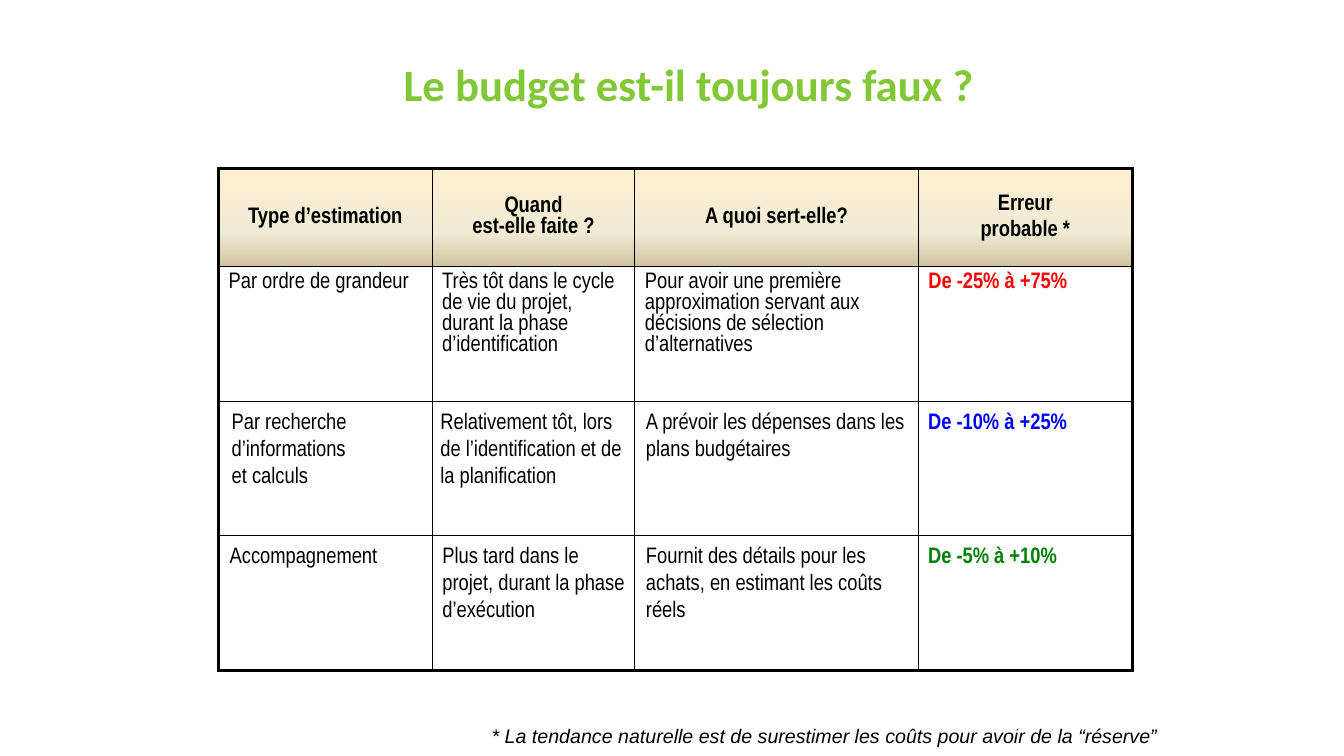
import pptx
import pptx.util
import pptx.oxml
import pptx.oxml.ns
import pptx.dml.color
import pptx.enum.text

Cm, Pt = pptx.util.Cm, pptx.util.Pt
ALIGN = pptx.enum.text.PP_ALIGN
ANCHOR = pptx.enum.text.MSO_ANCHOR
AUTO = pptx.enum.text.MSO_AUTO_SIZE
NS = pptx.oxml.ns.nsdecls("a")

HUES = {"title": "82C836", "ink": "000000", "paper": "FFFFFF",
        "red": "FF0000", "blue": "0000FF", "green": "008000",
        "cream": "FFEFD1", "sand": "F0EBD5", "tan": "D1C39F"}


def write(frame, *lines, font="Arial Narrow", size=16, hue="ink", bold=False,
          slant=False, align=ALIGN.LEFT, wrap=True):
    frame.word_wrap = wrap
    for i, line in enumerate(lines):
        para = frame.paragraphs[0] if i == 0 else frame.add_paragraph()
        para.text = line
        para.alignment = align
        if i:
            para.space_before = Pt(size * 0.2)
        for run in para.runs:
            run.font.name, run.font.size = font, Pt(size)
            run.font.bold, run.font.italic = bold, slant
            run.font.color.rgb = pptx.dml.color.RGBColor.from_string(HUES[hue])


def border(cell, side, width):
    cell._tc.get_or_add_tcPr().append(pptx.oxml.parse_xml(
        f'<a:ln{side} {NS} w="{Pt(width)}"><a:solidFill>'
        f'<a:srgbClr val="{HUES["ink"]}"/></a:solidFill></a:ln{side}>'))


deck = pptx.Presentation()
deck.slide_width, deck.slide_height = Cm(33.87), Cm(19.05)
slide = deck.slides.add_slide(deck.slide_layouts[6])
shapes = slide.shapes

# Title
title = shapes.add_textbox(Cm(0.85), Cm(0.73), Cm(33.02), Cm(2.74)).text_frame
title.vertical_anchor = ANCHOR.MIDDLE
write(title, "Le budget est-il toujours faux ?", font="Calibri", size=32,
      hue="title", bold=True, align=ALIGN.CENTER)

# Footnote
note = shapes.add_textbox(Cm(12.14), Cm(18.11), Cm(17.5), Cm(0.86)).text_frame
write(note, "* La tendance naturelle est de surestimer les coûts pour avoir de la “réserve”",
      font="Arial", size=14, slant=True, wrap=False)

# Table grid
wide = [5.38, 5.11, 7.14, 5.4]
high = [2.48, 3.39, 3.39, 3.39]
table = shapes.add_table(4, 4, Cm(5.51), Cm(4.24), Cm(sum(wide)), Cm(sum(high))).table
table.first_row = table.horz_banding = False
for col, size in zip(table.columns, wide):
    col.width = Cm(size)
for row, size in zip(table.rows, high):
    row.height = Cm(size)

# Borders and fills: thick outside, thin inside
stops = "".join(f'<a:gs pos="{pos}000"><a:srgbClr val="{HUES[hue]}"/></a:gs>'
                for pos, hue in [(0, "cream"), (65, "sand"), (100, "tan")])
for r in range(4):
    for c in range(4):
        cell = table.cell(r, c)
        for side, edge in [("L", c == 0), ("R", c == 3), ("T", r == 0), ("B", r == 3)]:
            border(cell, side, 2.25 if edge else 1)
        if r == 0:
            cell._tc.tcPr.append(pptx.oxml.parse_xml(
                f'<a:gradFill {NS}><a:gsLst>{stops}</a:gsLst>'
                '<a:lin ang="5400000" scaled="0"/></a:gradFill>'))
        else:
            cell.fill.solid()
            cell.fill.fore_color.rgb = pptx.dml.color.RGBColor.from_string(HUES["paper"])

# Header row and first row
heads = [["Type d’estimation"], ["Quand\nest-elle faite ?"],
         ["A quoi sert-elle?"], ["Erreur", "probable *"]]
first = ["Par ordre de grandeur",
         "Très tôt dans le cycle de vie du projet, durant la phase d’identification",
         "Pour avoir une première approximation servant aux décisions de sélection d’alternatives",
         "De -25% à +75%"]
for c in range(4):
    head = table.cell(0, c)
    head.vertical_anchor = ANCHOR.MIDDLE
    write(head.text_frame, *heads[c], bold=True, align=ALIGN.CENTER)
    last = c == 3
    write(table.cell(1, c).text_frame, first[c], bold=last,
          hue="red" if last else "ink")

# Text laid over the last two rows: left, width, wrap, text
rows = [
    (10.13, "blue", [
        (5.59, 5.26, True, "Par recherche d’informations\net calculs"),
        (10.85, 5.18, True, "Relativement tôt, lors de l’identification et de la planification"),
        (16.03, 7.09, True, "A prévoir les dépenses dans les plans budgétaires"),
        (23.14, 4.04, False, "De -10% à +25%")]),
    (13.51, "green", [
        (5.54, 4.27, False, "Accompagnement"),
        (10.9, 5.13, True, "Plus tard dans le projet, durant la phase d’exécution"),
        (16.03, 7.09, True, "Fournit des détails pour les achats, en estimant les coûts réels"),
        (23.14, 3.78, False, "De -5% à +10%")]),
]
for top, tint, parts in rows:
    for c, (left, width, wrap, text) in enumerate(parts):
        frame = shapes.add_textbox(Cm(left), Cm(top), Cm(width), Cm(0.94)).text_frame
        frame.auto_size = AUTO.SHAPE_TO_FIT_TEXT
        last = c == 3
        write(frame, text, bold=last, hue=tint if last else "ink", wrap=wrap)

deck.save("out.pptx")
